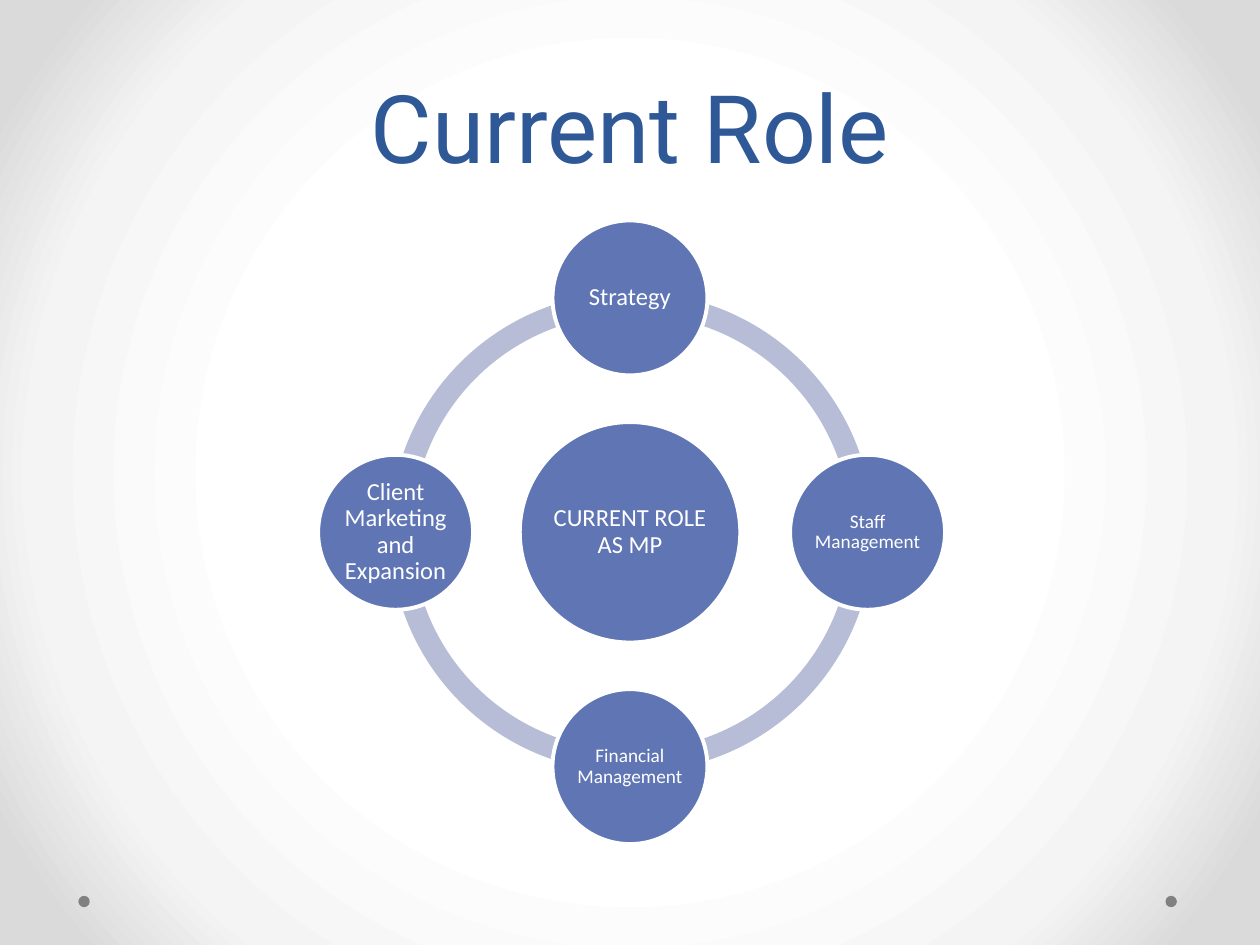
import pptx
import pptx.util
import pptx.dml.color
import pptx.enum.shapes
import pptx.enum.text
import lxml.etree

deck = pptx.Presentation()
deck.slide_width = pptx.util.Inches(10)
deck.slide_height = pptx.util.Inches(7.5)
col, row = deck.slide_width / 100, deck.slide_height / 100
page = deck.slides.add_slide(deck.slide_layouts[6])
kinds = pptx.enum.shapes.MSO_SHAPE


def hue(code):
    return pptx.dml.color.RGBColor.from_string(code)


def say(shape, text, font="Calibri", size=14, color="FFFFFF", lead=0.9, inset=0, anchor="MIDDLE"):
    frame = shape.text_frame
    frame.word_wrap = True
    frame.vertical_anchor = pptx.enum.text.MSO_ANCHOR[anchor]
    frame.margin_left = frame.margin_right = pptx.util.Inches(inset)
    frame.margin_top = frame.margin_bottom = pptx.util.Inches(inset)
    line = frame.paragraphs[0]
    line.alignment = pptx.enum.text.PP_ALIGN.CENTER
    line.line_spacing = lead
    run = line.add_run()
    run.text = text
    run.font.name = font
    run.font.size = pptx.util.Pt(size)
    run.font.color.rgb = hue(color)


fill = page.background.fill
fill.gradient()
grad = page.background._cSld.bg.bgPr[0]
for child in list(grad):
    grad.remove(child)
space = "http://schemas.openxmlformats.org/drawingml/2006/main"
stops = "".join(
    f'<a:gs pos="{spot * 1000}"><a:srgbClr val="{code}"/></a:gs>'
    for spot, code in [(50, "FFFFFF"), (76, "F4F4F4"), (92, "DADADA")]
)
root = lxml.etree.fromstring(
    f'<a:root xmlns:a="{space}"><a:gsLst>{stops}</a:gsLst><a:path path="circle">'
    '<a:fillToRect l="50000" t="50000" r="50000" b="50000"/></a:path></a:root>'
)
for child in list(root):
    grad.append(child)

mid, deep, gap = 50, 56.33, 24.8
arc, disc = kinds.BLOCK_ARC, kinds.OVAL
items = [
    (disc, 92.95, 95.4, 0.09, "808080", (), "", 0),
    (disc, 6.67, 95.4, 0.09, "808080", (), "", 0),
    (arc, mid, deep, 3.81, "B7BDD6", (108, 162, 0.046), "", 0),
    (arc, mid, deep, 3.81, "B7BDD6", (54, 108, 0.046), "", 0),
    (arc, 50.25, deep, 3.81, "B7BDD6", (216, 54.49, 0.046), "", 0),
    (arc, 50.25, deep, 3.81, "B7BDD6", (161.51, 0, 0.046), "", 0),
    (disc, mid, deep, 1.75, "6076B4", (), "CURRENT ROLE AS MP", 14),
    (disc, mid, deep - gap, 1.23, "6076B4", (), "Strategy", 14),
    (disc, 68.86, deep, 1.23, "6076B4", (), "Staff Management", 11),
    (disc, mid, deep + gap, 1.23, "6076B4", (), "Financial Management", 11),
    (disc, 31.4, deep, 1.23, "6076B4", (), "Client Marketing and Expansion", 14),
]
for kind, across, down, side, color, turns, text, size in items:
    span = pptx.util.Inches(side)
    left = int(across * col - span / 2)
    top = int(down * row - span / 2)
    shape = page.shapes.add_shape(kind, left, top, span, span)
    shape.shadow.inherit = False
    shape.fill.solid()
    shape.fill.fore_color.rgb = hue(color)
    for place, turn in enumerate(turns):
        shape.adjustments[place] = turn
    if text:
        shape.line.color.rgb = hue("FFFFFF")
        shape.line.width = pptx.util.Pt(2.25)
        say(shape, text, size=size)
    else:
        shape.line.fill.background()

title = page.shapes.add_textbox(int(5 * col), int(2.3 * row), int(90 * col), int(17.7 * row))
say(title, "Current Role", font="Roboto", size=54, color="2F5897",
    lead=pptx.util.Pt(58), inset=0.05, anchor="BOTTOM")

deck.save("out.pptx")
